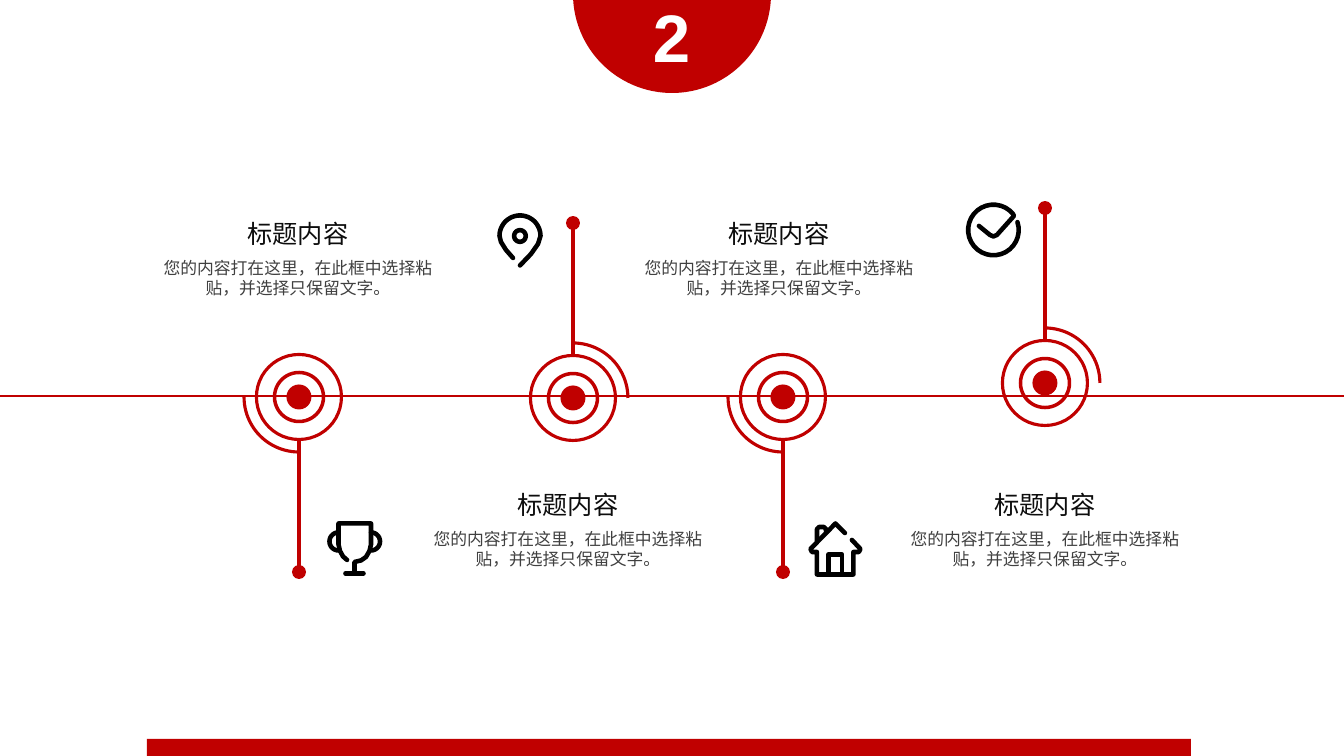
from math import cos, radians, sin

from lxml import etree
from pptx import Presentation
from pptx.dml.color import RGBColor
from pptx.enum.shapes import MSO_CONNECTOR, MSO_SHAPE as SHAPE
from pptx.enum.text import PP_ALIGN as ALIGN
from pptx.oxml.ns import qn
from pptx.util import Pt

SLIDE_W, SLIDE_H = 1344, 756
EMU_PER_PX = 12192000 / SLIDE_W
RED = RGBColor(0xC0, 0x00, 0x00)
BLACK = RGBColor(0x00, 0x00, 0x00)
WHITE = RGBColor(0xFF, 0xFF, 0xFF)
TITLE_INK = RGBColor(0x0D, 0x0D, 0x0D)
BODY_INK = RGBColor(0x40, 0x40, 0x40)
TITLE = "标题内容"
BODY = "您的内容打在这里，在此框中选择粘贴，并选择只保留文字。"


def px(length):
    return round(length * EMU_PER_PX)


def add_solid(slide, kind, left, top, width, height):
    solid = slide.shapes.add_shape(kind, px(left), px(top), px(width), px(height))
    solid.shadow.inherit = False
    solid.fill.solid()
    solid.fill.fore_color.rgb = RED
    solid.line.fill.background()


def add_centred(slide, kind, cx, cy, size, outline=None):
    """Add a square shape round a centre: filled, or only outlined in points."""
    left, top = cx - size / 2, cy - size / 2
    if outline is None:
        add_solid(slide, kind, left, top, size, size)
        return None
    ring = slide.shapes.add_shape(kind, px(left), px(top), px(size), px(size))
    ring.shadow.inherit = False
    ring.fill.background()
    ring.line.color.rgb = RED
    ring.line.width = Pt(outline)
    return ring


def add_rule(slide, x1, y1, x2, y2, weight):
    rule = slide.shapes.add_connector(
        MSO_CONNECTOR.STRAIGHT, px(x1), px(y1), px(x2), px(y2))
    rule.line.color.rgb = RED
    rule.line.width = Pt(weight)
    etree.SubElement(rule._element.spPr, qn("a:effectLst"))


def add_text(slide, words, left, top, width, height, font, size, colour,
             align=ALIGN.CENTER, wrap=True, bold=None):
    box = slide.shapes.add_textbox(px(left), px(top), px(width), px(height))
    box.text_frame.word_wrap = wrap
    paragraph = box.text_frame.paragraphs[0]
    paragraph.alignment = align
    run = paragraph.add_run()
    run.text = words
    run.font.name = font
    run.font.size = Pt(size)
    run.font.bold = bold
    run.font.color.rgb = colour
    east_asian = etree.SubElement(run._r.get_or_add_rPr(), qn("a:ea"))
    east_asian.set("typeface", font)


def add_number_badge(slide, left, top, size):
    add_solid(slide, SHAPE.OVAL, left, top, size, size)
    add_text(slide, "2", left + 70, top + 95, 58, 92, "Arial", 48, WHITE,
             align=ALIGN.LEFT, wrap=False, bold=True)


def add_marker(slide, cx, cy, way):
    """Add a target with its stem; way is 1 for downwards, -1 for upwards."""
    add_centred(slide, SHAPE.OVAL, cx, cy, 85, outline=2.25)
    add_centred(slide, SHAPE.OVAL, cx, cy, 49, outline=2.5)
    add_centred(slide, SHAPE.OVAL, cx, cy, 25)
    quarter = add_centred(slide, SHAPE.ARC, cx, cy, 110, outline=2.25)
    quarter.rotation = 180 if way == 1 else 0
    tip = cy + way * 175
    add_rule(slide, cx, cy + way * 42, cx, tip, 3)
    add_centred(slide, SHAPE.OVAL, cx, tip, 14)


def add_caption(slide, left, top):
    add_text(slide, TITLE, left + 62, top, 170, 40,
             "Noto Sans CJK SC", 18, TITLE_INK)
    add_text(slide, BODY, left, top + 40, 294, 50, "Calibri", 12, BODY_INK)


def arc(cx, cy, radius, start, end, steps=30):
    """Points along a clockwise arc, angles in degrees from three o'clock."""
    angles = [radians(start + (end - start) * i / steps) for i in range(steps + 1)]
    return [(cx + radius * cos(a), cy + radius * sin(a)) for a in angles]


def add_icon(slide, left, top, strokes):
    """Draw each (points, closed) stroke with a round pen from the icon's corner."""
    for points, closed in strokes:
        start, *rest = [(px(left + x), px(top + y)) for x, y in points]
        pen = slide.shapes.build_freeform(*start)
        pen.add_line_segments(rest, close=closed)
        stroke = pen.convert_to_shape()
        stroke.shadow.inherit = False
        stroke.fill.background()
        stroke.line.color.rgb = BLACK
        stroke.line.width = Pt(3.25)
        outline = stroke.line._get_or_add_ln()
        outline.set("cap", "rnd")
        etree.SubElement(outline, qn("a:round"))


TROPHY = [
    ([(20, 39), (16, 35.5), (13, 30), (11.5, 23.5), (11.5, 2.5), (44, 2.5),
      (44, 23.5), (42.5, 30), (39, 36), (34, 39.5), (27.5, 41), (27.5, 52.5)], False),
    (arc(11.5, 20.5, 9, 90, 270), False),
    (arc(44, 20.5, 9, 270, 450), False),
    ([(18.5, 52.5), (36.5, 52.5)], False),
]
PIN = [
    ([(16, 45), (9, 37), (4, 29)] + arc(23, 23, 20.5, 180, 360)
     + [(41, 31), (34, 41), (23, 52.5)], False),
    (arc(23, 23, 5.8, 0, 360), True),
]
HOUSE = [
    ([(37, 12), (27.5, 2.5), (2.5, 28), (4, 31), (9, 31), (9, 53.5), (45.5, 53.5),
      (45.5, 31), (51, 31), (52.5, 28), (44, 19)], False),
    ([(20.5, 33.5), (34, 33.5), (34, 53.5), (20.5, 53.5)], True),
    ([(9, 20), (9, 8), (11, 6), (16, 6), (18, 8), (18, 10)], False),
]
CHECK = [
    (arc(27.5, 28, 25.3, -18, 321)
     + [(48, 14), (31, 33), (27.5, 34.5), (24, 33), (13, 24)], False),
]

# Marker centre and direction, caption corner, icon corner and icon
STEPS = [
    ((299, 397, 1), (151, 213), (327, 521), TROPHY),
    ((573, 398, -1), (421, 484), (497, 213), PIN),
    ((783, 397, 1), (632, 213), (808, 521), HOUSE),
    ((1045, 383, -1), (898, 484), (966, 202), CHECK),
]


def add_timeline(slide):
    add_rule(slide, 0, 396, SLIDE_W, 396, 1.5)
    for marker, caption, icon_corner, icon in STEPS:
        add_marker(slide, *marker)
        add_caption(slide, *caption)
        add_icon(slide, *icon_corner, icon)


def main():
    deck = Presentation()
    deck.slide_width, deck.slide_height = px(SLIDE_W), px(SLIDE_H)
    slide = deck.slides.add_slide(deck.slide_layouts[6])
    add_timeline(slide)
    add_number_badge(slide, 573, -105, 198)
    add_solid(slide, SHAPE.RECTANGLE, 147, 739, 1044, 17)
    deck.save("out.pptx")


if __name__ == "__main__":
    main()
